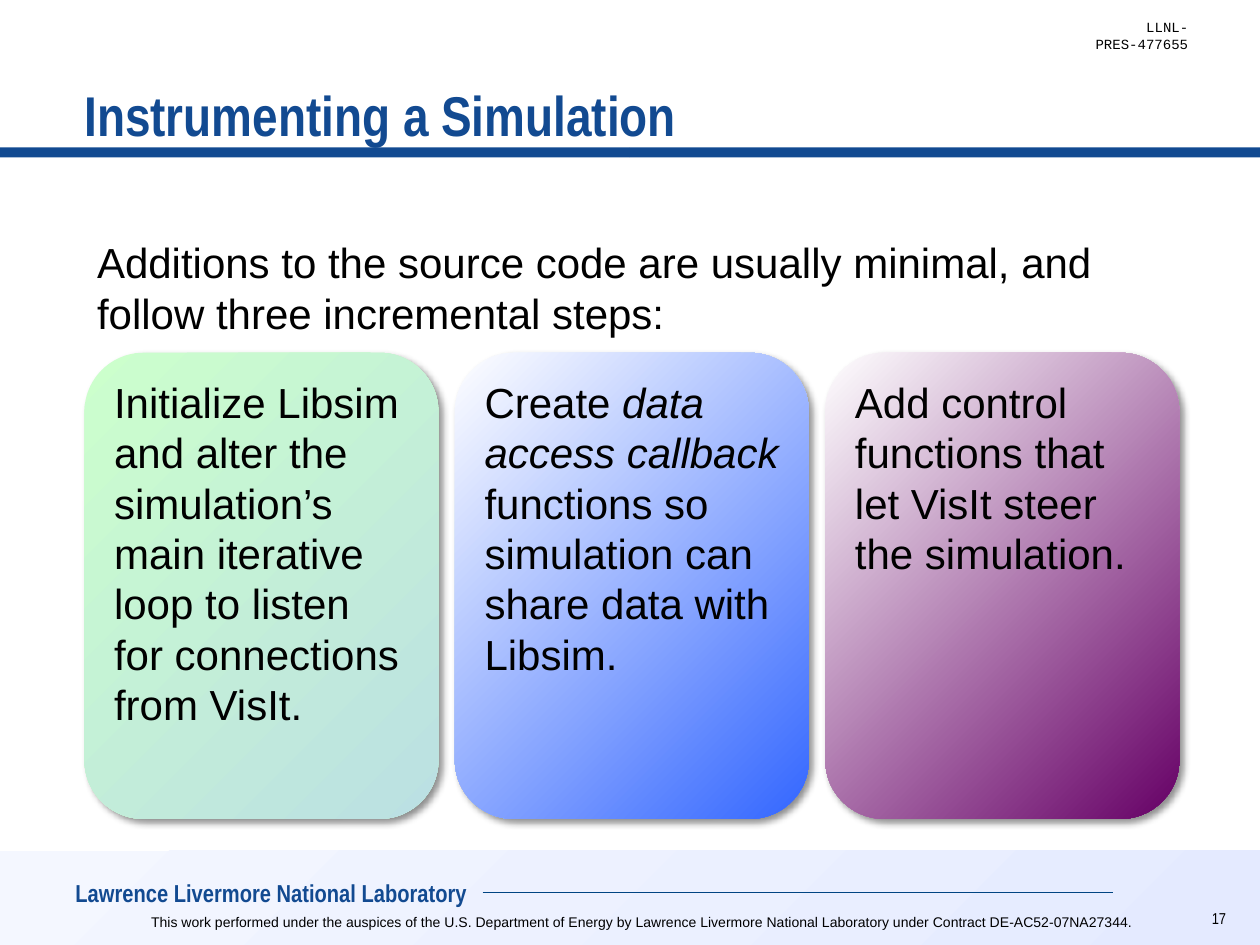
from lxml.etree import SubElement as Sub
from pptx import Presentation
from pptx.dml.color import RGBColor as Rgb
from pptx.enum.shapes import MSO_CONNECTOR as Link, MSO_SHAPE as Shape
from pptx.enum.text import MSO_ANCHOR as Anchor, MSO_AUTO_SIZE as Auto, PP_ALIGN as Align
from pptx.oxml import parse_xml
from pptx.oxml.ns import nsdecls, qn
from pptx.util import Inches, Pt

THEME = {
    "navy": "124A91", "rule": "004483", "ink": "000000",
    "band": ("F4F7FF", "E4EAFF"),
    "sans": "Arial", "slim": "Arial Narrow", "mono": "Courier New",
    "head": 32, "text": 24, "name": 14, "page": 9, "note": 8,
}
RADIAL = '<a:path path="circle"><a:fillToRect l="100000" t="100000"/></a:path>'
LINEAR = '<a:lin ang="2700000" scaled="0"/>'


def write(shape, *runs, font=THEME["sans"], size=THEME["text"], color=THEME["ink"],
          bold=False, align=Align.LEFT, anchor=Anchor.TOP, left=0.1, lead=None):
    """Write runs into a shape; a run given as a tuple is italic."""
    frame = shape.text_frame
    frame.word_wrap, frame.auto_size = True, Auto.NONE
    frame.vertical_anchor, frame.margin_left = anchor, Inches(left)
    para = frame.paragraphs[0]
    para.alignment, para.line_spacing, para.space_before = align, lead, Pt(0)
    for part in runs:
        run = para.add_run()
        run.text = part[0] if isinstance(part, tuple) else part
        face = run.font
        face.name, face.size, face.bold = font, Pt(size), bold
        face.italic = isinstance(part, tuple)
        face.color.rgb = Rgb.from_string(color)
    return para


def paint(shape, colors, way):
    """Fill a shape with a two-colour gradient and take off its line and shadow."""
    stops = "".join(f'<a:gs pos="{pos}"><a:srgbClr val="{tint}"/></a:gs>'
                    for pos, tint in zip((0, 100000), colors))
    shape.element.spPr.insert(2, parse_xml(
        f'<a:gradFill {nsdecls("a")} rotWithShape="1"><a:gsLst>{stops}</a:gsLst>{way}</a:gradFill>'))
    shape.line.fill.background()
    shape.shadow.inherit = False


deck = Presentation()
deck.slide_width, deck.slide_height = Inches(10), Inches(7.5)
W, H = deck.slide_width, deck.slide_height
slide = deck.slides.add_slide(deck.slide_layouts[1])
shapes = slide.shapes
title, body = shapes.title, slide.placeholders[1]
edge = Inches(0.67)

# Footer band
band = shapes.add_shape(Shape.RECTANGLE, 0, int(H * 0.9), W, int(H * 0.1))
paint(band, THEME["band"], LINEAR)

# Title bar in two halves
for half in range(2):
    bar = shapes.add_shape(Shape.RECTANGLE, half * W // 2, Inches(1.17), W // 2, Inches(0.08))
    bar.fill.solid()
    bar.fill.fore_color.rgb = Rgb.from_string(THEME["navy"])
    bar.line.fill.background()
    bar.shadow.inherit = False

# Footer rule
rule = shapes.add_connector(Link.STRAIGHT, *map(Inches, (3.83, 7.08, 8.83, 7.08)))
rule.line.color.rgb = Rgb.from_string(THEME["rule"])
rule.line.width = Pt(0.5)
Sub(rule.element.spPr, qn("a:effectLst"))

# Page number, report number, laboratory name and credit
labels = [
    ((9.49, 7.2, 0.34, 0.21), "17",
     dict(font=THEME["slim"], size=THEME["page"], align=Align.RIGHT, left=0, lead=0.75)),
    ((8.34, 0.1, 1.19, 0.24), "LLNL-PRES-477655",
     dict(font=THEME["mono"], size=THEME["note"], align=Align.RIGHT)),
    ((0.5, 6.92, 3.58, 0.33), "Lawrence Livermore National Laboratory",
     dict(font=THEME["slim"], size=THEME["name"], color=THEME["navy"], bold=True)),
    ((0.67, 7.2, 8.86, 0.24),
     "This work performed under the auspices of the U.S. Department of Energy by "
     "Lawrence Livermore National Laboratory under Contract DE-AC52-07NA27344.",
     dict(size=THEME["note"], align=Align.CENTER)),
]
for place, words, look in labels:
    write(shapes.add_textbox(*map(Inches, place)), words, **look)

# Title and lead-in, in front of the bar and band
for holder, place in ((title, (0.33, 8.69, 0.89)), (body, (1.83, 8.83, 5.17))):
    holder.left = edge
    holder.top, holder.width, holder.height = map(Inches, place)
    holder.element.getparent().append(holder.element)
write(title, "Instrumenting a Simulation", font=THEME["slim"], size=THEME["head"],
      color=THEME["navy"], bold=True, anchor=Anchor.BOTTOM, left=0)
para = body.text_frame.paragraphs[0]
props = para._p.get_or_add_pPr()
props.set("marL", "0")
props.set("indent", "0")
Sub(props, qn("a:buNone"))
write(body, "Additions to the source code are usually minimal, and follow three incremental steps:")

# Three step cards
steps = [
    (("BBE0E3", "CCFFCC"),
     ["Initialize Libsim and alter the simulation’s main iterative loop "
      "to listen for connections from VisIt."]),
    (("3366FF", "FFFFFF"),
     ["Create ", ("data access callback ",),
      "functions so simulation can share data with Libsim."]),
    (("660066", "FFFFFF"),
     ["Add control functions that let VisIt steer the simulation."]),
]
pitch = Inches(2.94)
for col, (tints, words) in enumerate(steps):
    card = shapes.add_shape(Shape.ROUNDED_RECTANGLE, edge + col * pitch, Inches(2.8),
                            Inches(2.81), Inches(3.7))
    paint(card, tints, RADIAL)
    card.element.spPr.find(qn("a:effectLst")).append(parse_xml(
        f'<a:outerShdw {nsdecls("a")} blurRad="{Pt(4)}" dist="{Pt(3)}" dir="2700000" algn="tl" '
        f'rotWithShape="0"><a:srgbClr val="{THEME["ink"]}"><a:alpha val="43000"/></a:srgbClr>'
        '</a:outerShdw>'))
    write(card, *words)

deck.save("out.pptx")
